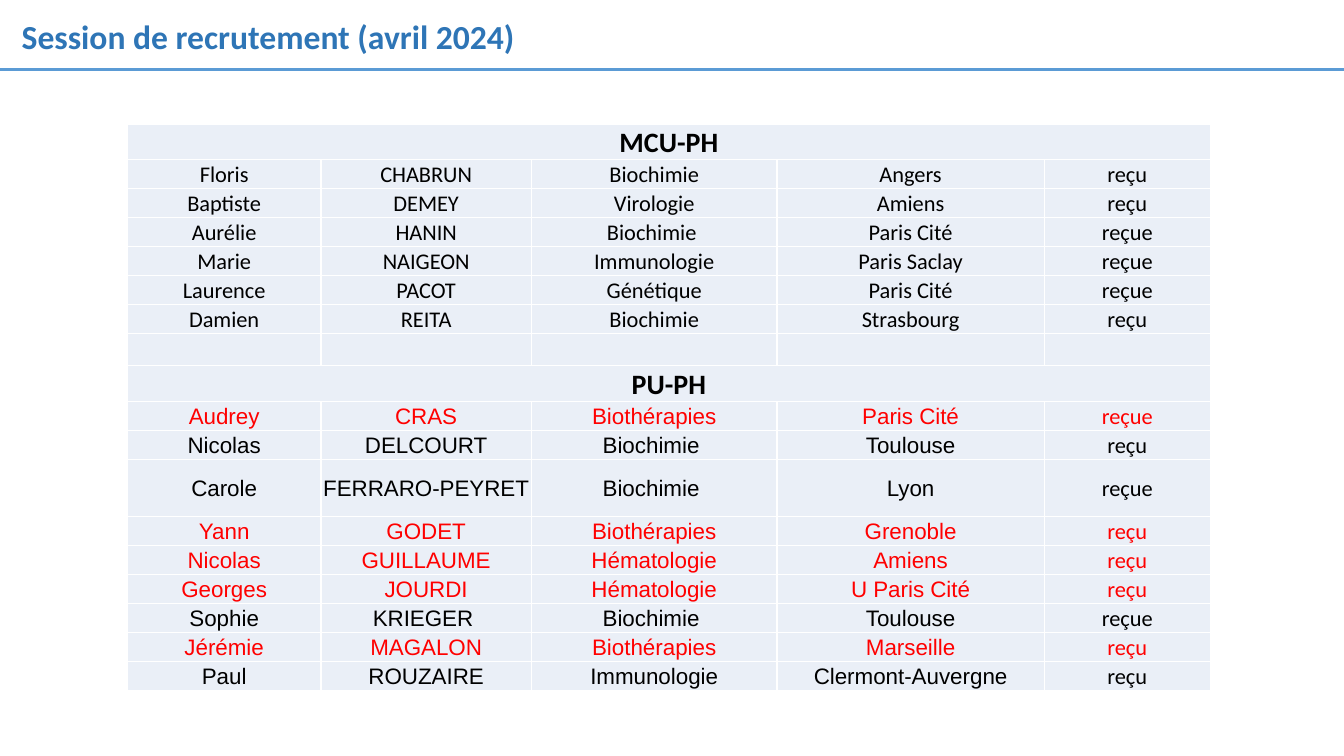
from lxml import etree
from pptx import Presentation
from pptx.dml.color import RGBColor
from pptx.enum.shapes import MSO_CONNECTOR
from pptx.enum.text import MSO_ANCHOR as ANCHOR, MSO_AUTO_SIZE as AUTO, PP_ALIGN as ALIGN
from pptx.oxml.ns import qn
from pptx.util import Pt

# Content
TITLE = "Session de recrutement (avril 2024)"
MCU = [
    ("Floris", "CHABRUN", "Biochimie", "Angers", "reçu"),
    ("Baptiste", "DEMEY", "Virologie", "Amiens", "reçu"),
    ("Aurélie", "HANIN", "Biochimie ", "Paris Cité", "reçue"),
    ("Marie", "NAIGEON", "Immunologie", "Paris Saclay", "reçue"),
    ("Laurence", "PACOT", "Génétique", "Paris Cité", "reçue"),
    ("Damien", "REITA", "Biochimie", "Strasbourg", "reçu"),
]
PU = [
    ("Audrey", "CRAS", "Biothérapies", "Paris Cité", "reçue"),
    ("Nicolas", "DELCOURT", "Biochimie ", "Toulouse", "reçu"),
    ("Carole", "FERRARO-PEYRET", "Biochimie ", "Lyon", "reçue"),
    ("Yann", "GODET", "Biothérapies", "Grenoble", "reçu"),
    ("Nicolas", "GUILLAUME", "Hématologie", "Amiens", "reçu"),
    ("Georges", "JOURDI", "Hématologie", "U Paris Cité", "reçu"),
    ("Sophie", "KRIEGER ", "Biochimie ", "Toulouse", "reçue"),
    ("Jérémie", "MAGALON", "Biothérapies", "Marseille", "reçu"),
    ("Paul", "ROUZAIRE", "Immunologie", "Clermont-Auvergne", "reçu"),
]
ROWS = [("MCU-PH",), *MCU, (), ("PU-PH",), *PU]
PU_START = len(MCU) + 3
RED_FIELDS = ("Biothérapies", "Hématologie")

# Format
BLACK = RGBColor(0, 0, 0)
RED = RGBColor(0xFF, 0, 0)
TITLE_BLUE = RGBColor(0x2E, 0x75, 0xB6)
RULE_BLUE = RGBColor(0x5B, 0x9B, 0xD5)
CELL_FILL = RGBColor(0xEA, 0xEF, 0xF7)
WHITE = RGBColor(0xFF, 0xFF, 0xFF)
SLIDE_W, SLIDE_H = 960, 540
COL_WIDTHS = (138.3, 150.3, 175.5, 190.8, 118.7)
HEADING_H, PERSON_H, TALL_H, GAP_H = 25.6, 20.7, 40.7, 23


def write(tf, text, size=16, font="Calibri", color=BLACK, bold=False, align=ALIGN.CENTER):
    p = tf.paragraphs[0]
    p.alignment = align
    r = p.add_run()
    r.text = text
    r.font.size, r.font.name, r.font.bold = Pt(size), font, bold
    r.font.color.rgb = color


def style_cell(cell, anchor):
    cell.margin_left = cell.margin_right = cell.margin_top = Pt(0.72)
    cell.margin_bottom = 0
    cell.vertical_anchor = anchor
    tc_pr = cell._tc.get_or_add_tcPr()
    for side in ("lnL", "lnR", "lnT", "lnB"):
        ln = etree.SubElement(tc_pr, qn(f"a:{side}"), w=str(Pt(1)))
        fill = etree.SubElement(ln, qn("a:solidFill"))
        etree.SubElement(fill, qn("a:srgbClr"), val=str(WHITE))
    cell.fill.solid()
    cell.fill.fore_color.rgb = CELL_FILL


def row_height(row):
    if not row:
        return GAP_H
    if len(row) == 1:
        return HEADING_H
    return TALL_H if "FERRARO-PEYRET" in row else PERSON_H


prs = Presentation()
prs.slide_width, prs.slide_height = Pt(SLIDE_W), Pt(SLIDE_H)
s = prs.slides.add_slide(prs.slide_layouts[6])

# Results table
heights = [row_height(row) for row in ROWS]
table = s.shapes.add_table(len(ROWS), len(COL_WIDTHS), Pt(91), Pt(88.6),
                           Pt(sum(COL_WIDTHS)), Pt(sum(heights))).table
table.first_row = table.horz_banding = False
for col, width in zip(table.columns, COL_WIDTHS):
    col.width = Pt(width)

for i, row in enumerate(ROWS):
    table.rows[i].height = Pt(heights[i])
    heading = len(row) == 1
    for cell in table.rows[i].cells:
        style_cell(cell, ANCHOR.BOTTOM if heading else ANCHOR.MIDDLE)
    if heading:
        table.cell(i, 0).merge(table.cell(i, len(COL_WIDTHS) - 1))
        write(table.cell(i, 0).text_frame, row[0], size=20, bold=True)
        continue
    in_pu = i >= PU_START
    for j, text in enumerate(row):
        write(table.cell(i, j).text_frame, text,
              font="Arial" if in_pu and j < 4 else "Calibri",
              color=RED if in_pu and row[2] in RED_FIELDS else BLACK)

# Title
tf = s.shapes.add_textbox(Pt(8.4), Pt(7.5), Pt(370), Pt(36.4)).text_frame
tf.word_wrap = False
tf.auto_size = AUTO.SHAPE_TO_FIT_TEXT
write(tf, TITLE, size=24, color=TITLE_BLUE, bold=True, align=ALIGN.LEFT)

# Rule under the title
rule = s.shapes.add_connector(MSO_CONNECTOR.STRAIGHT, 0, Pt(49.7), Pt(SLIDE_W), Pt(49.7))
rule.line.color.rgb = RULE_BLUE
rule.line.width = Pt(2.25)
etree.SubElement(rule._element.spPr, qn("a:effectLst"))

prs.save("out.pptx")
